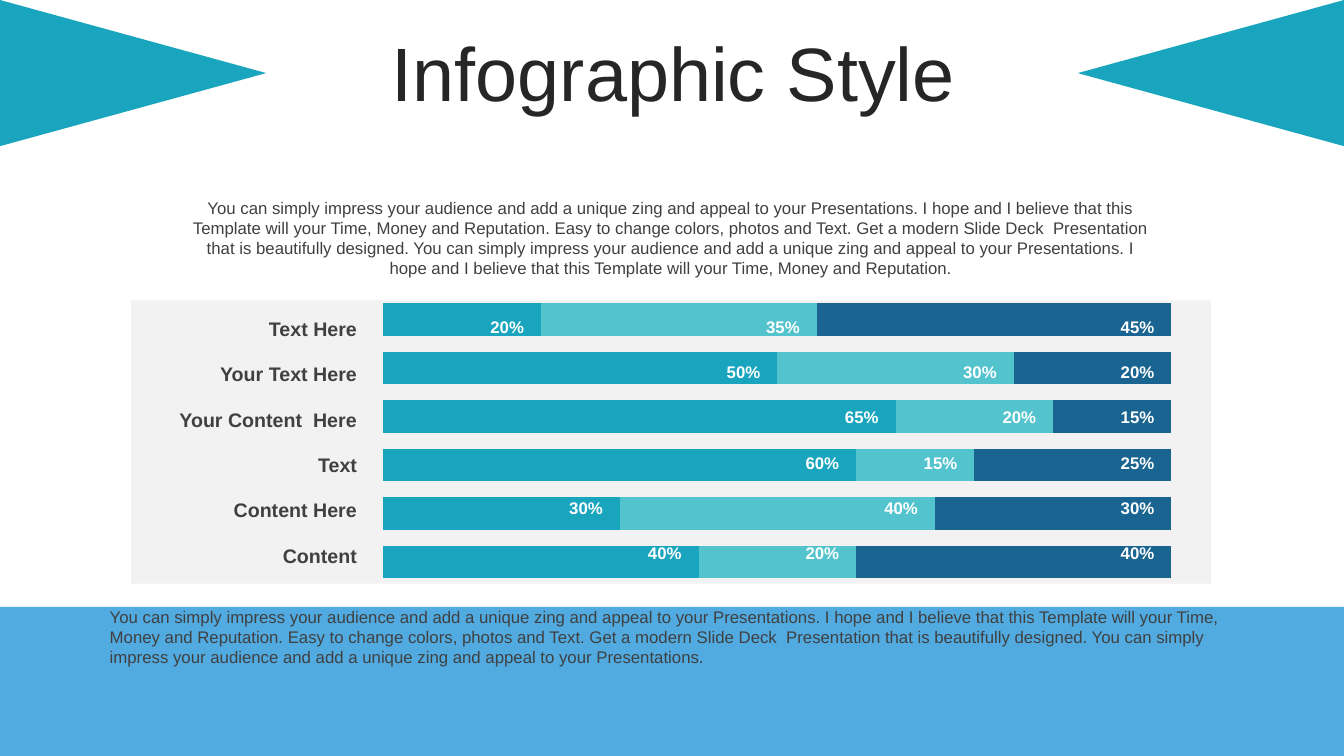
from lxml import etree
from pptx import Presentation
from pptx import util as u
from pptx.chart.data import CategoryChartData
from pptx.dml.color import RGBColor
from pptx.enum import chart as charts, shapes, text
from pptx.oxml.ns import qn

WIDTH, HEIGHT = 13.33, 7.5
FONT = "Arial"
COLOURS = {
    "band": "51ABE1", "panel": "F2F2F2", "title": "262626", "body": "404040",
    "label": "FFFFFF", "first": "19A5BE", "second": "53C3CD", "third": "196491",
}
SERIES_COLOURS = ("first", "second", "third")

# Rows from top to bottom: caption and its three shares in percent
ROWS = [
    ("Text Here", (20, 35, 45)),
    ("Your Text Here", (50, 30, 20)),
    ("Your Content  Here", (65, 20, 15)),
    ("Text", (60, 15, 25)),
    ("Content Here", (30, 40, 30)),
    ("Content", (40, 20, 40)),
]
ROW_TOP, ROW_PITCH = 3.09, 0.45
CHART_BOX = (3.64, 2.87, 8.14, 3.01)
PLOT_MARGIN = 0.02
BARS_LEFT = CHART_BOX[0] + PLOT_MARGIN * CHART_BOX[2]
BARS_WIDTH = CHART_BOX[2] * (1 - 2 * PLOT_MARGIN)
LABEL_WIDTH, LABEL_GAP = 0.63, 0.02

IMPRESS = ("You can simply impress your audience and add a unique zing and appeal "
           "to your Presentations.")
HOPE = ("I hope and I believe that this Template will your Time, Money and "
        "Reputation.")
MODERN = ("Easy to change colors, photos and Text. Get a modern Slide Deck  "
          "Presentation that is beautifully designed.")
FOOTER = " ".join((IMPRESS, HOPE, MODERN, IMPRESS))
INTRO = f"{FOOTER} {HOPE}"


def rgb(name):
    return RGBColor.from_string(COLOURS[name])


def inches(box):
    return [u.Inches(length) for length in box]


def apply(target, formats):
    for attribute, value in formats.items():
        setattr(target, attribute, value)


def write(frame, words, size, colour, align, bold=False,
          anchor=text.MSO_ANCHOR.TOP):
    apply(frame, {"text": words, "word_wrap": True, "vertical_anchor": anchor,
                  "auto_size": text.MSO_AUTO_SIZE.NONE})
    paragraph = frame.paragraphs[0]
    paragraph.alignment = align
    font = paragraph.runs[0].font
    apply(font, {"name": FONT, "size": u.Pt(size), "bold": bold})
    font.color.rgb = rgb(colour)
    return paragraph


def add_text(slide, box, *args, **formats):
    frame = slide.shapes.add_textbox(*inches(box)).text_frame
    write(frame, *args, **formats)


def add_block(slide, kind, box, colour, rotation=0):
    block = slide.shapes.add_shape(kind, *inches(box))
    block.shadow.inherit = False
    block.fill.solid()
    block.fill.fore_color.rgb = rgb(colour)
    block.line.fill.background()
    block.rotation = rotation


def add_title(slide, words):
    title = slide.shapes.title
    left, top, width, height = inches((0.35, 0.37, 12.66, 0.79))
    apply(title, {"left": left, "top": top, "width": width, "height": height})
    paragraph = write(title.text_frame, words, 54, "title", text.PP_ALIGN.CENTER,
                      anchor=text.MSO_ANCHOR.MIDDLE)
    apply(paragraph, {"line_spacing": 0.9, "space_before": u.Pt(10)})


def fill_plot_area(chart):
    """Pin the bars to the chart frame, inside an equal margin."""
    plot_area = chart._chartSpace.chart.plotArea
    for layout in plot_area.findall(qn("c:layout")):
        plot_area.remove(layout)
    layout = etree.Element(qn("c:layout"))
    plot_area.insert(0, layout)
    manual = etree.SubElement(layout, qn("c:manualLayout"))
    share = 1 - 2 * PLOT_MARGIN
    for tag, value in (("layoutTarget", "inner"), ("xMode", "edge"),
                       ("yMode", "edge"), ("x", PLOT_MARGIN), ("y", PLOT_MARGIN),
                       ("w", share), ("h", share)):
        etree.SubElement(manual, qn(f"c:{tag}")).set("val", str(value))


def add_share_chart(slide):
    bottom_up = [shares for _, shares in reversed(ROWS)]
    data = CategoryChartData()
    data.categories = [str(number + 1) for number in range(len(ROWS))]
    for number, values in enumerate(zip(*bottom_up), start=1):
        data.add_series(f"Series {number}", values)
    chart = slide.shapes.add_chart(charts.XL_CHART_TYPE.BAR_STACKED_100,
                                   *inches(CHART_BOX), data).chart
    apply(chart, {"has_legend": False, "has_title": False})
    apply(chart.font, {"name": FONT, "size": u.Pt(18)})
    for axis in (chart.category_axis, chart.value_axis):
        apply(axis, {"visible": False, "has_major_gridlines": False})
    plot = chart.plots[0]
    apply(plot, {"gap_width": 50, "overlap": 100, "vary_by_categories": False})
    for series, colour in zip(plot.series, SERIES_COLOURS):
        series.format.fill.solid()
        series.format.fill.fore_color.rgb = rgb(colour)
    fill_plot_area(chart)


def add_row_texts(slide, row, caption, shares):
    """Write the caption and, at the end of each bar segment, its share."""
    top = ROW_TOP + row * ROW_PITCH
    add_text(slide, (1.47, top, 2.17, 0.34), caption, 14, "body",
             text.PP_ALIGN.RIGHT, bold=True, anchor=text.MSO_ANCHOR.MIDDLE)
    total = 0
    for share in shares:
        total += share
        left = BARS_LEFT + BARS_WIDTH * total / 100 - LABEL_WIDTH - LABEL_GAP
        add_text(slide, (left, top, LABEL_WIDTH, 0.3), f"{share}%", 12, "label",
                 text.PP_ALIGN.CENTER, bold=True)


def main():
    deck = Presentation()
    deck.slide_width, deck.slide_height = inches((WIDTH, HEIGHT))
    slide = deck.slides.add_slide(deck.slide_layouts[5])
    kinds = shapes.MSO_SHAPE

    band_top = 6.02
    add_block(slide, kinds.RECTANGLE,
              (0, band_top, WIDTH, HEIGHT - band_top), "band")
    add_title(slide, "Infographic Style")
    add_block(slide, kinds.RECTANGLE, (1.3, 2.98, 10.71, 2.81), "panel")
    add_share_chart(slide)
    for row, (caption, shares) in enumerate(ROWS):
        add_row_texts(slide, row, caption, shares)
    add_text(slide, (1.76, 1.91, 9.79, 0.91), INTRO, 12, "body",
             text.PP_ALIGN.CENTER)
    add_text(slide, (0.99, 5.97, 11.33, 0.71), FOOTER, 12, "body",
             text.PP_ALIGN.LEFT)

    base, depth = 1.45, 2.64
    inset = (depth - base) / 2
    for left, rotation in ((inset, 90), (WIDTH - inset - base, 270)):
        add_block(slide, kinds.ISOSCELES_TRIANGLE, (left, -inset, base, depth),
                  "first", rotation)
    deck.save("out.pptx")


if __name__ == "__main__":
    main()
